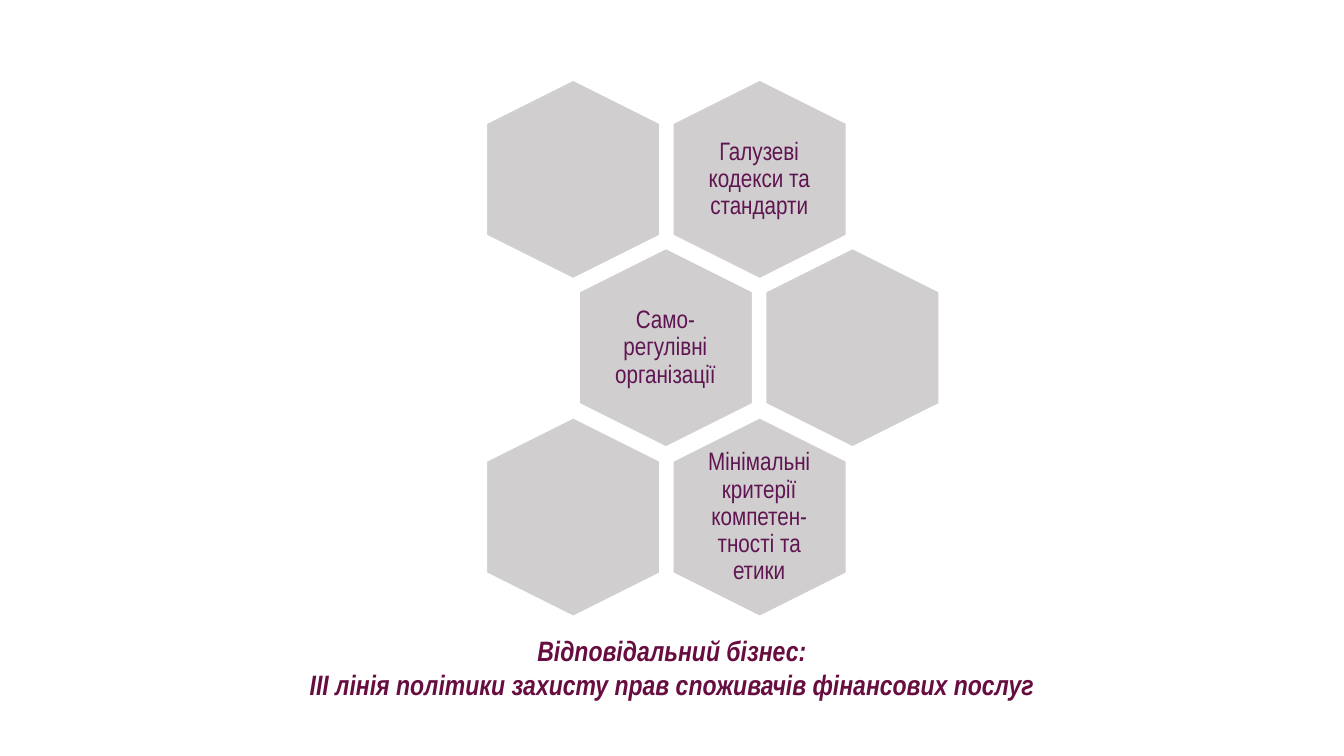
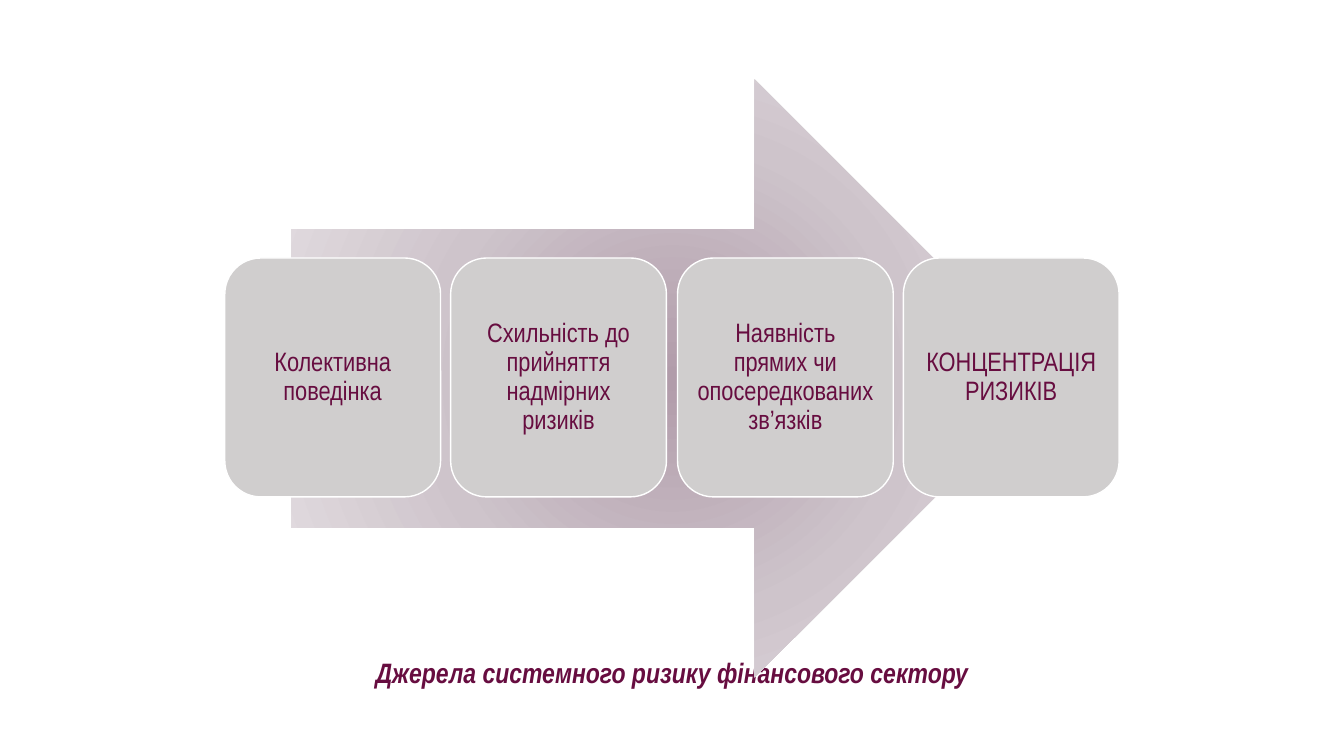
from pptx import Presentation
from pptx import util as u
from pptx.dml.color import RGBColor
from pptx.enum import shapes, text
from pptx.oxml import parse_xml
from pptx.oxml.ns import nsdecls, qn

PX = 9144  # EMU in one px, 100 px to the inch
SLIDE_WIDTH, SLIDE_HEIGHT = 1333, 750
COLORS = {
    "paper": "FFFFFF",
    "tile": "D0CECE",
    "wine": "670D40",
    "plum": "5F1551",
    "arrow_core": "B19CAA",
    "arrow_middle": "CEC4CB",
    "arrow_edge": "E7E2E5",
}
CAPTION_FONT = {"name": "Arial Narrow", "size": u.Pt(20), "bold": True, "italic": True}
HEXAGON_FONT = {"name": "Arial Narrow", "size": u.Pt(18)}
CARD_FONT = {"name": "Arial Narrow", "size": u.Pt(19)}

HEXAGON_ROWS = [
    ["", "Галузеві кодекси та стандарти"],
    ["Само-регулівні організації", ""],
    ["", "Мінімальні критерії компетен-тності та етики"],
]
CARDS = [
    "Колективна поведінка",
    "Схильність до прийняття надмірних ризиків",
    "Наявність прямих чи опосередкованих зв’язків",
    "КОНЦЕНТРАЦІЯ РИЗИКІВ",
]


def color(name):
    return RGBColor.from_string(COLORS[name])


def to_emu(*lengths):
    return [u.Emu(length * PX) for length in lengths]


def write(shape, lines, font, ink, inset=None, **para_format):
    """Fill a shape with centred paragraphs; inset is in px."""
    frame = shape.text_frame
    frame.word_wrap = True
    if inset is not None:
        for side in ("left", "top", "right", "bottom"):
            setattr(frame, f"margin_{side}", u.Emu(inset * PX))
    for index, line in enumerate(lines):
        para = frame.add_paragraph() if index else frame.paragraphs[0]
        para.text = line
        for key, value in {"alignment": text.PP_ALIGN.CENTER, **para_format}.items():
            setattr(para, key, value)
        for key, value in font.items():
            setattr(para.font, key, value)
        para.font.color.rgb = color(ink)
    return frame


def add_caption(page, top, height, lines):
    box = page.shapes.add_textbox(*to_emu(0, top, SLIDE_WIDTH, height))
    box.fill.solid()
    box.fill.fore_color.rgb = color("paper")
    frame = write(box, lines, CAPTION_FONT, "wine")
    frame.auto_size = text.MSO_AUTO_SIZE.SHAPE_TO_FIT_TEXT


def add_tile(page, kind, left, top, width, height):
    tile = page.shapes.add_shape(kind, *to_emu(left, top, width, height))
    tile.shadow.inherit = False
    tile.fill.solid()
    tile.fill.fore_color.rgb = color("tile")
    tile.line.color.rgb = color("paper")
    tile.line.width = u.Pt(1)
    return tile


def add_hexagon(page, left, top, label):
    """Add a hexagon standing on its point, with an upright label if there is one."""
    tile = add_tile(page, shapes.MSO_SHAPE.HEXAGON, left, top, 197, 172)
    tile.rotation = 90
    tile.adjustments[0] = 0.25
    if label:
        box = page.shapes.add_textbox(*to_emu(left + 39, top + 18, 118, 136))
        frame = write(box, [label], HEXAGON_FONT, "plum", 7, line_spacing=0.9)
        frame.vertical_anchor = text.MSO_ANCHOR.MIDDLE


def add_honeycomb(page, left, top, rows):
    """Lay out rows of hexagons, each odd row shifted by half a column."""
    column_step, two_row_steps = 185, 335
    for row, labels in enumerate(rows):
        shift = row % 2 * column_step // 2
        for column, label in enumerate(labels):
            add_hexagon(page, left + shift + column * column_step,
                        top + row * two_row_steps // 2, label)


def add_card(page, left, label):
    card = add_tile(page, shapes.MSO_SHAPE.ROUNDED_RECTANGLE, left, 256, 214, 237)
    frame = write(card, [label], CARD_FONT, "wine", 8, line_spacing=0.9)
    frame.vertical_anchor = text.MSO_ANCHOR.MIDDLE


def set_radial_fill(shape, stops):
    """Fill a shape from its centre outwards; stops are (percent, colour name)."""
    stop_xml = "".join(
        f'<a:gs pos="{percent * 1000}"><a:srgbClr val="{COLORS[name]}"/></a:gs>'
        for percent, name in stops)
    gradient = parse_xml(
        f'<a:gradFill {nsdecls("a")} rotWithShape="1"><a:gsLst>{stop_xml}</a:gsLst>'
        '<a:path path="circle">'
        '<a:fillToRect l="50000" t="50000" r="50000" b="50000"/>'
        '</a:path></a:gradFill>')
    shape.fill.gradient()
    properties = shape._element.spPr
    properties.replace(properties.find(qn("a:gradFill")), gradient)


def add_big_arrow(page):
    arrow = page.shapes.add_shape(shapes.MSO_SHAPE.RIGHT_ARROW, *to_emu(289, 79, 756, 593))
    arrow.shadow.inherit = False
    arrow.line.fill.background()
    set_radial_fill(arrow, [(0, "arrow_core"), (50, "arrow_middle"), (100, "arrow_edge")])


def build_business_slide(page):
    add_caption(page, 624, 77, [
        "Відповідальний бізнес:",
        "ІІІ лінія політики захисту прав споживачів фінансових послуг",
    ])
    add_honeycomb(page, 470, 92, HEXAGON_ROWS)


def build_risk_slide(page):
    add_caption(page, 645, 44, ["Джерела системного ризику фінансового сектору"])
    add_big_arrow(page)
    for index, label in enumerate(CARDS):
        add_card(page, 223 + index * 1123 // 5, label)


def main():
    deck = Presentation()
    deck.slide_width, deck.slide_height = to_emu(SLIDE_WIDTH, SLIDE_HEIGHT)
    for build in (build_business_slide, build_risk_slide):
        build(deck.slides.add_slide(deck.slide_layouts[6]))
    deck.save("out.pptx")


if __name__ == "__main__":
    main()
